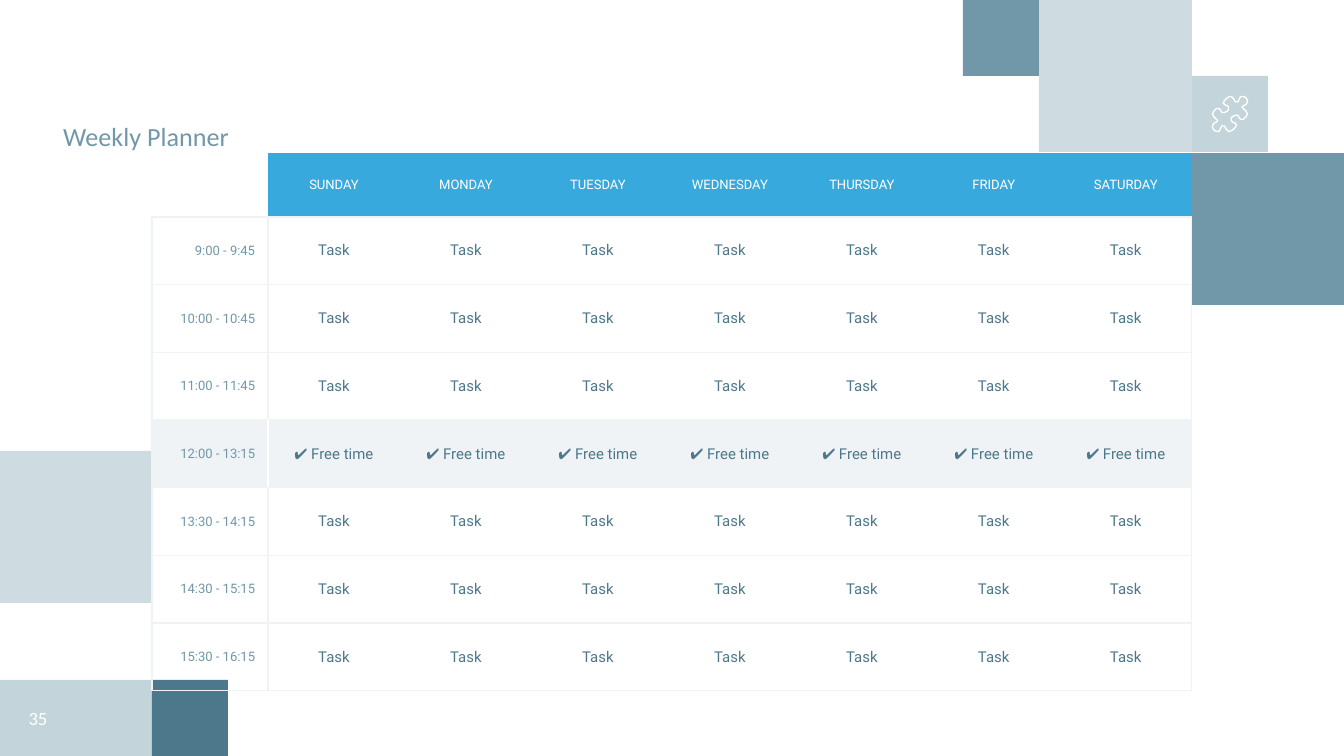
from pptx import Presentation
from pptx.dml.color import RGBColor
from pptx.enum.shapes import MSO_SHAPE
from pptx.enum.text import MSO_ANCHOR, MSO_AUTO_SIZE, PP_ALIGN
from pptx.oxml import parse_xml
from pptx.oxml.ns import nsdecls
from pptx.util import Pt

PX = 914400 / 134.4
HEX = {"steel": "7198A9", "pale": "CEDBE0", "deep": "4D778A",
       "blue": "37A9DD", "mist": "EFF3F5", "white": "FFFFFF"}


def style(frame, size, font, color, align):
    para = frame.paragraphs[0]
    para.alignment = align
    for run in para.runs:
        run.font.size = Pt(size)
        run.font.name = font
        run.font.color.rgb = RGBColor.from_string(HEX[color])


def edge(cell, side, color):
    if color:
        paint = f'<a:solidFill><a:srgbClr val="{HEX[color]}"/></a:solidFill>'
    else:
        paint = "<a:noFill/>"
    cell._tc.get_or_add_tcPr().append(parse_xml(
        f'<a:ln{side} {nsdecls("a")} w="9525">{paint}</a:ln{side}>'))


deck = Presentation()
deck.slide_width, deck.slide_height = int(1344 * PX), int(756 * PX)
slide = deck.slides.add_slide(deck.slide_layouts[5])
shapes = slide.shapes

# Background squares: left, top, width, height, colour, opacity in percent
tiles = [
    (1192, 153, 152, 152, "steel", 100),
    (1192, 76, 76, 76, "steel", 41),
    (1039, 0, 153, 152, "pale", 100),
    (963, 0, 76, 76, "steel", 100),
    (0, 451, 152, 152, "pale", 100),
    (152, 680, 76, 76, "deep", 100),
    (0, 680, 152, 76, "steel", 41),
]
for *box, color, alpha in tiles:
    tile = shapes.add_shape(MSO_SHAPE.RECTANGLE, *[int(v * PX) for v in box])
    tile.shadow.inherit = False
    tile.line.fill.background()
    tile.fill.solid()
    tile.fill.fore_color.rgb = RGBColor.from_string(HEX[color])
    if alpha < 100:
        tint = tile.fill._xPr.find(".//{*}srgbClr")
        tint.append(parse_xml(f'<a:alpha {nsdecls("a")} val="{alpha * 1000}"/>'))

# Puzzle icon: half the outline around its centre, then the same half turned 180°
half = [(10, -6), (12, -7), (13, -9), (13, -10), (12, -12), (10, -13), (8, -13),
        (7, -11), (6, -9), (4, -9), (3, -11), (1, -13), (0, -13), (-2, -12),
        (-4, -10), (-5, -8), (-4, -7), (-2, -6), (-1, -5), (-1, -3), (-2, -2),
        (-4, -1), (-6, -1), (-7, -3), (-8, -4), (-10, -4), (-12, -2), (-13, 0),
        (-12, 2), (-10, 4), (-9, 5)]
points = half + [(-x, -y) for x, y in half]
pen = shapes.build_freeform(*points[0], scale=9144)
pen.add_line_segments(points[1:], close=True)
icon = pen.convert_to_shape(int(1230 * PX), int(114 * PX))
icon.shadow.inherit = False
icon.fill.background()
icon.line.color.rgb = RGBColor.from_string(HEX["white"])
icon.line.width = Pt(0.75)

# Title
title = shapes.title
title.left, title.top, title.width, title.height = [
    int(v * PX) for v in (63, 97, 605, 55)]
frame = title.text_frame
frame.text = "Weekly Planner"
frame.auto_size = MSO_AUTO_SIZE.NONE
frame.vertical_anchor = MSO_ANCHOR.BOTTOM
frame.margin_left = frame.margin_right = frame.margin_top = frame.margin_bottom = 0
style(frame, 14, "Calibri", "steel", PP_ALIGN.LEFT)

# Page number
frame = shapes.add_textbox(0, int(680 * PX), int(76 * PX), int(76 * PX)).text_frame
frame.text = "35"
frame.word_wrap = True
frame.vertical_anchor = MSO_ANCHOR.MIDDLE
style(frame, 10, "Calibri", "white", PP_ALIGN.CENTER)

# Planner table
days = ["SUNDAY", "MONDAY", "TUESDAY", "WEDNESDAY", "THURSDAY", "FRIDAY", "SATURDAY"]
times = ["9:00 - 9:45", "10:00 - 10:45", "11:00 - 11:45", "12:00 - 13:15",
         "13:30 - 14:15", "14:30 - 15:15", "15:30 - 16:15"]
free = 4
grid = [[""] + days]
for r, time in enumerate(times, 1):
    grid.append([time] + ["✔ Free time" if r == free else "Task"] * len(days))

table = shapes.add_table(len(grid), len(grid[0]), int(152 * PX), int(153 * PX),
                         int(1040 * PX), int(538 * PX)).table
table.first_row = table.horz_banding = False
for c, col in enumerate(table.columns):
    col.width = int((132 if c else 116) * PX)
for r, row in enumerate(table.rows):
    row.height = int((474 / len(times) if r else 64) * PX)

for r, line in enumerate(grid):
    for c, text in enumerate(line):
        cell = table.cell(r, c)
        cell.text = text
        cell.vertical_anchor = MSO_ANCHOR.MIDDLE
        cell.margin_left = cell.margin_right = int(13 * PX)
        cell.margin_top = cell.margin_bottom = int(13 * PX)

        # Borders
        body = "mist" if r else None
        split = "white" if r == free else body
        edge(cell, "L", {0: body, 1: split}.get(c))
        edge(cell, "R", {0: split, len(days): body}.get(c))
        edge(cell, "T", body)
        edge(cell, "B", "mist")

        # Fill
        shade = "mist" if r == free else "blue" if r == 0 and c else None
        if shade:
            cell.fill.solid()
            cell.fill.fore_color.rgb = RGBColor.from_string(HEX[shade])
        else:
            cell.fill.background()

        # Text
        if not text:
            cell.text_frame.paragraphs[0].font.size = Pt(7)
        elif r == 0:
            style(cell.text_frame, 7, "Roboto", "white", PP_ALIGN.CENTER)
        elif c == 0:
            style(cell.text_frame, 7, "Roboto", "steel", PP_ALIGN.RIGHT)
        else:
            style(cell.text_frame, 8, "Roboto", "deep", PP_ALIGN.CENTER)

deck.save("out.pptx")
